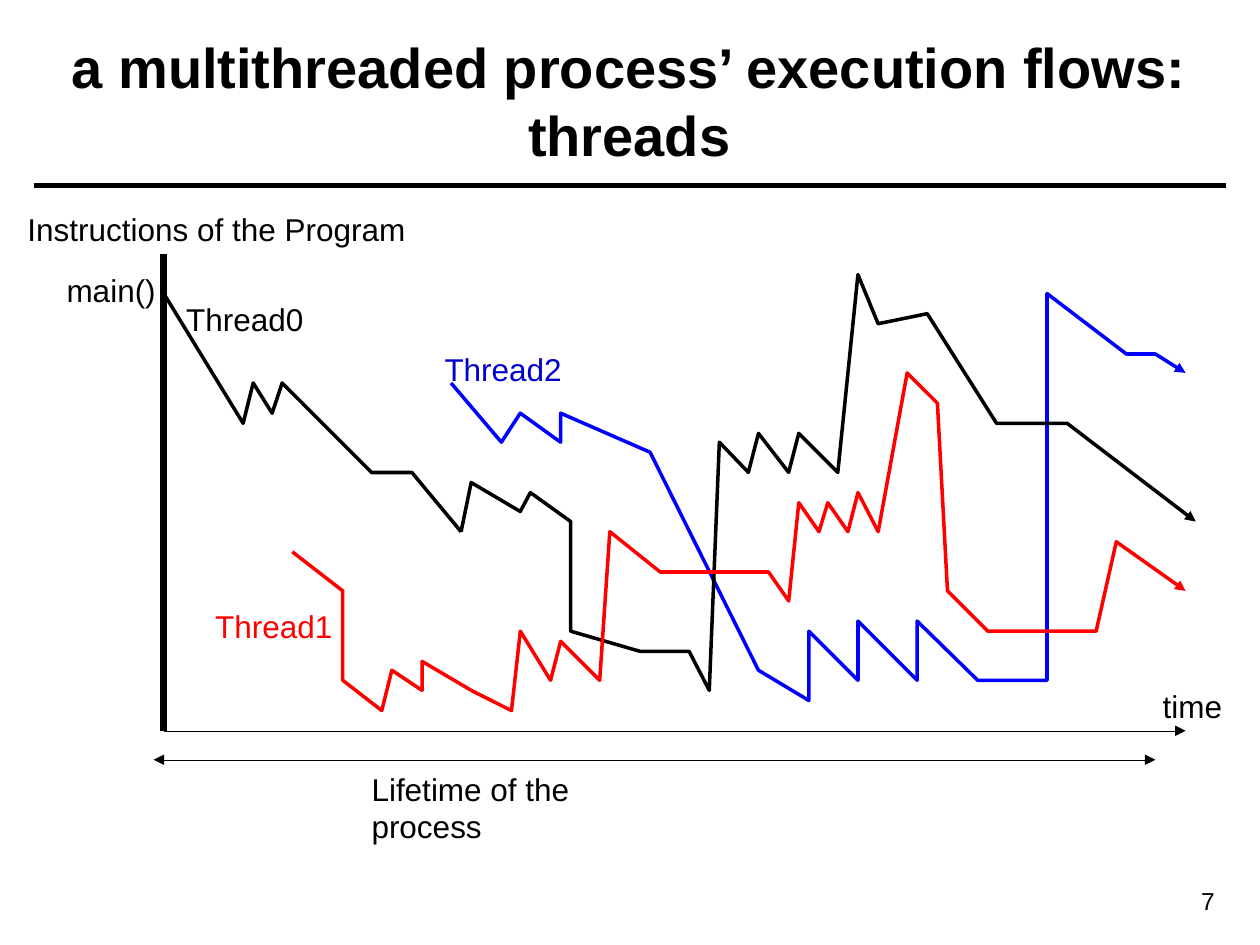
from lxml.etree import SubElement
from pptx import Presentation
from pptx.dml.color import RGBColor
from pptx.enum.shapes import MSO_CONNECTOR
from pptx.enum.text import MSO_ANCHOR, MSO_AUTO_SIZE, PP_ALIGN
from pptx.oxml.ns import qn
from pptx.util import Inches, Pt

FONT = "Arial"
COLORS = {"black": "000000", "red": "FF0000", "blue": "0000FF", "navy": "0000CC"}
TITLE = "a multithreaded process’ execution flows: threads"

# text, left, top, width, color
LABELS = [
    ("Instructions of the Program", 0.12, 1.62, 3.2, "black"),
    ("time", 9.13, 5.4, 0.67, "black"),
    ("Lifetime of the process", 2.85, 6.06, 2.71, "black"),
    ("main()", 0.43, 2.1, 0.91, "black"),
    ("Thread0", 1.38, 2.33, 1.13, "black"),
    ("Thread1", 1.61, 4.77, 1.13, "red"),
    ("Thread2", 3.43, 2.73, 1.13, "navy"),
]

# start, end, width in points, arrowhead ends
LINES = [
    ((0.27, 1.47), (9.73, 1.47), 3, ()),
    ((1.3, 5.8), (9.41, 5.8), 0.25, ("tailEnd",)),
    ((1.3, 5.8), (1.3, 2.02), 4, ()),
    ((1.22, 6.03), (9.17, 6.03), 0.25, ("headEnd", "tailEnd")),
]

# color, arrowhead ends, points
THREAD_PATHS = [
    ("blue", ("tailEnd",), [
        (3.58, 3.04), (3.98, 3.51), (4.13, 3.28), (4.45, 3.51), (4.45, 3.28),
        (5.16, 3.59), (6.02, 5.32), (6.42, 5.56), (6.42, 5.01), (6.81, 5.4),
        (6.81, 4.93), (7.28, 5.4), (7.28, 4.93), (7.76, 5.4), (8.31, 5.4),
        (8.31, 2.33), (8.94, 2.81), (9.17, 2.81), (9.41, 2.96)]),
    ("black", (), [
        (1.3, 2.33), (1.93, 3.36), (2.01, 3.04), (2.16, 3.28), (2.24, 3.04),
        (2.4, 3.2)]),
    ("black", (), [(2.4, 3.2), (2.95, 3.75), (3.27, 3.75), (3.66, 4.22)]),
    ("black", ("tailEnd",), [
        (3.66, 4.22), (3.74, 3.83), (4.13, 4.06), (4.21, 3.91), (4.53, 4.14),
        (4.53, 5.01), (5.08, 5.17), (5.47, 5.17), (5.63, 5.48), (5.71, 3.51),
        (5.94, 3.75), (6.02, 3.44), (6.26, 3.75), (6.34, 3.44), (6.65, 3.75),
        (6.81, 2.18), (6.97, 2.57), (7.36, 2.49), (7.91, 3.36), (8.47, 3.36),
        (9.49, 4.14)]),
    ("red", (), [
        (2.32, 4.38), (2.72, 4.69), (2.72, 5.4), (3.03, 5.64), (3.11, 5.32),
        (3.35, 5.48), (3.35, 5.25), (3.74, 5.48)]),
    ("red", ("tailEnd",), [
        (3.74, 5.48), (4.06, 5.64), (4.13, 5.01), (4.37, 5.4), (4.45, 5.09),
        (4.76, 5.4), (4.84, 4.22), (5.24, 4.54), (6.1, 4.54), (6.26, 4.77),
        (6.34, 3.99), (6.5, 4.22), (6.57, 3.99), (6.73, 4.22), (6.81, 3.91),
        (6.97, 4.22), (7.2, 2.96), (7.44, 3.2), (7.52, 4.69), (7.84, 5.01),
        (8.7, 5.01), (8.86, 4.3), (9.41, 4.69)]),
]


def place(shape, left, top, width, height):
    shape.left, shape.top = Inches(left), Inches(top)
    shape.width, shape.height = Inches(width), Inches(height)


def write(frame, text, size, color="black", align=PP_ALIGN.LEFT, bold=False):
    paragraph = frame.paragraphs[0]
    paragraph.alignment = align
    run = paragraph.add_run()
    run.text = text
    run.font.name, run.font.size, run.font.bold = FONT, Pt(size), bold
    run.font.color.rgb = RGBColor.from_string(COLORS[color])


def style_line(line, color, width, arrow_ends):
    line.color.rgb = RGBColor.from_string(COLORS[color])
    line.width = Pt(width)
    properties = line._get_or_add_ln()
    for end in arrow_ends:
        SubElement(properties, qn(f"a:{end}"), type="triangle")


def add_line(slide, start, end, width, arrow_ends):
    points = [Inches(value) for value in start + end]
    connector = slide.shapes.add_connector(MSO_CONNECTOR.STRAIGHT, *points)
    style_line(connector.line, "black", width, arrow_ends)
    SubElement(connector._element.spPr, qn("a:effectLst"))


def add_thread_path(slide, color, arrow_ends, points):
    start, *others = [(Inches(x), Inches(y)) for x, y in points]
    builder = slide.shapes.build_freeform(*start)
    builder.add_line_segments(others, close=False)
    shape = builder.convert_to_shape()
    shape.shadow.inherit = False
    shape.fill.background()
    style_line(shape.line, color, 2, arrow_ends)


def add_label(slide, text, left, top, width, color):
    box = slide.shapes.add_textbox(*map(Inches, (left, top, width, 0.4)))
    box.text_frame.word_wrap = False
    box.text_frame.auto_size = MSO_AUTO_SIZE.SHAPE_TO_FIT_TEXT
    write(box.text_frame, text, 18, color)


def main():
    """Build the slide on the execution flows of a multithreaded process."""
    presentation = Presentation()
    presentation.slide_width, presentation.slide_height = Inches(10), Inches(7.5)
    slide = presentation.slides.add_slide(presentation.slide_layouts[5])

    title = slide.shapes.title
    place(title, 0.35, 0.17, 9.29, 1.25)
    title.text_frame.word_wrap = True
    title.text_frame.auto_size = MSO_AUTO_SIZE.NONE
    title.text_frame.vertical_anchor = MSO_ANCHOR.MIDDLE
    write(title.text_frame, TITLE, 32, align=PP_ALIGN.CENTER, bold=True)

    for line in LINES:
        add_line(slide, *line)
    for label in LABELS:
        add_label(slide, *label)
    for thread_path in THREAD_PATHS:
        add_thread_path(slide, *thread_path)

    number = slide.shapes.add_textbox(*map(Inches, (8.7, 6.98, 1.04, 0.34)))
    number.text_frame.word_wrap = True
    write(number.text_frame, "7", 14, align=PP_ALIGN.RIGHT)

    presentation.save("out.pptx")


if __name__ == "__main__":
    main()
